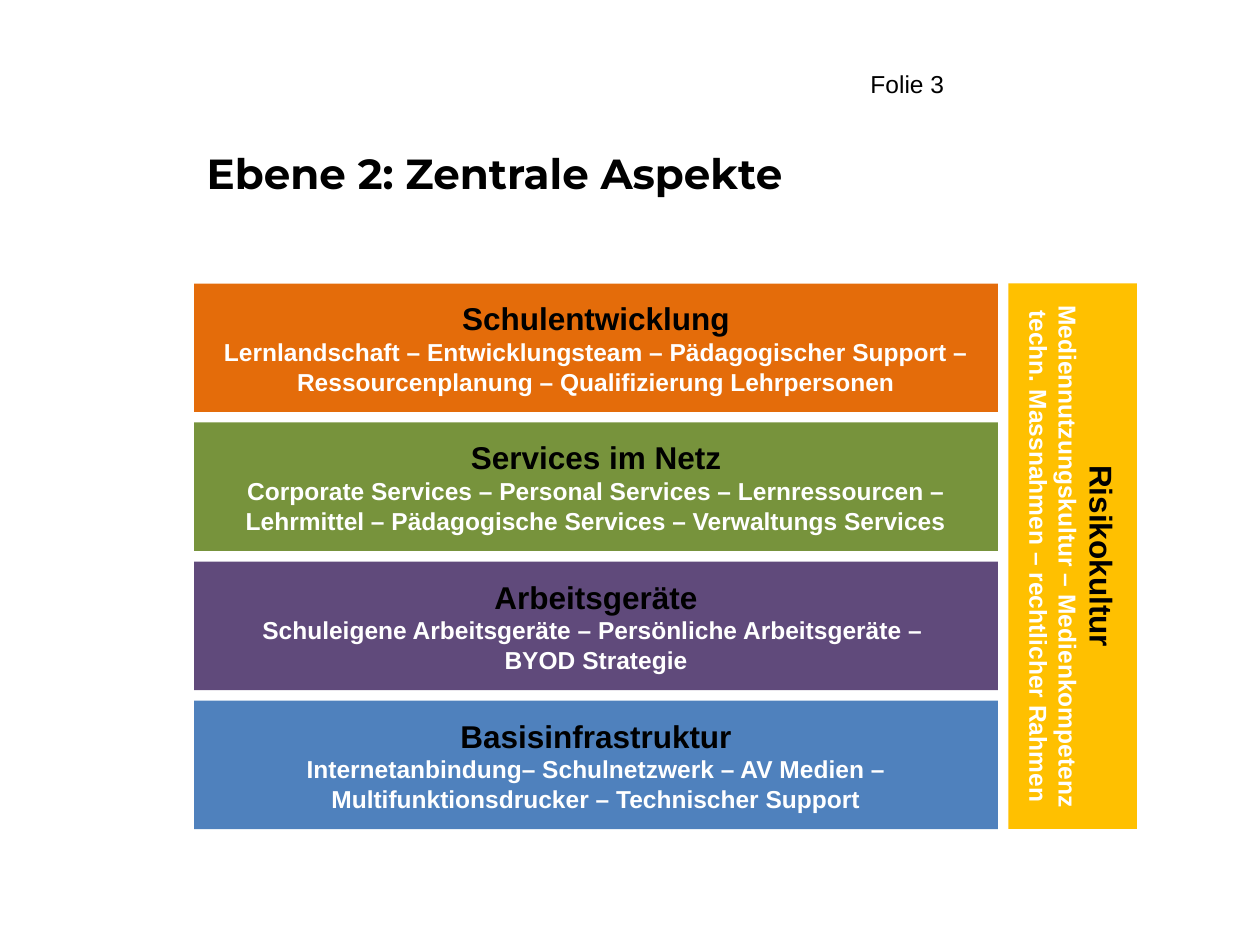
import pptx
import pptx.dml.color
import pptx.enum.shapes
import pptx.enum.text
import pptx.util

RGBColor = pptx.dml.color.RGBColor
BLACK = RGBColor(0x00, 0x00, 0x00)
WHITE = RGBColor(0xFF, 0xFF, 0xFF)
ORANGE = RGBColor(0xE4, 0x6C, 0x0A)
GREEN = RGBColor(0x77, 0x93, 0x3C)
PURPLE = RGBColor(0x60, 0x4A, 0x7B)
BLUE = RGBColor(0x4F, 0x81, 0xBD)
YELLOW = RGBColor(0xFF, 0xC0, 0x00)

GRID_LEFT, GRID_TOP = 1.54, 2.25
BAND_WIDTH, BAND_HEIGHT = 6.38, 1.02
GRID_HEIGHT = 4.33

LAYERS = [
    ("Schulentwicklung",
     "Lernlandschaft – Entwicklungsteam – Pädagogischer Support – "
     "Ressourcenplanung – Qualifizierung Lehrpersonen", ORANGE),
    ("Services im Netz",
     "Corporate Services – Personal Services – Lernressourcen – "
     "Lehrmittel – Pädagogische Services – Verwaltungs Services", GREEN),
    ("Arbeitsgeräte",
     "Schuleigene Arbeitsgeräte – Persönliche Arbeitsgeräte – \nBYOD Strategie", PURPLE),
    ("Basisinfrastruktur",
     "Internetanbindung– Schulnetzwerk – AV Medien – "
     "Multifunktionsdrucker – Technischer Support", BLUE),
]
GAP = (GRID_HEIGHT - len(LAYERS) * BAND_HEIGHT) / (len(LAYERS) - 1)


class AspectSlide:
    """Holds the style and the current slide, and adds each kind of element."""

    def __init__(self, presentation):
        self.font_name = "Arial"
        self.title_font_name = "Montserrat"
        self.slide = presentation.slides.add_slide(presentation.slide_layouts[5])

    def add_run(self, paragraph, text, size, color, bold=False, font_name=None):
        for index, line in enumerate(text.split("\n")):
            if index:
                paragraph.add_line_break()
            run = paragraph.add_run()
            run.text = line
            run.font.name = font_name or self.font_name
            run.font.size = pptx.util.Pt(size)
            run.font.bold = bold
            run.font.color.rgb = color

    def add_title(self, text):
        title = self.slide.shapes.title
        title.left, title.top, title.width, title.height = map(
            pptx.util.Inches, (GRID_LEFT, 1.12, 7.86, 0.59))
        frame = title.text_frame
        frame.auto_size = pptx.enum.text.MSO_AUTO_SIZE.NONE
        frame.vertical_anchor = pptx.enum.text.MSO_ANCHOR.TOP
        paragraph = frame.paragraphs[0]
        paragraph.alignment = pptx.enum.text.PP_ALIGN.LEFT
        self.add_run(paragraph, text, 24, BLACK, True, self.title_font_name)

    def add_label(self, text, left, top, width, height):
        label = self.slide.shapes.add_textbox(
            *map(pptx.util.Inches, (left, top, width, height)))
        label.text_frame.word_wrap = True
        self.add_run(label.text_frame.paragraphs[0], text, 14, BLACK)

    def add_band(self, heading, aspects, color, left, top, width):
        band = self.slide.shapes.add_shape(
            pptx.enum.shapes.MSO_SHAPE.RECTANGLE,
            *map(pptx.util.Inches, (left, top, width, BAND_HEIGHT)))
        band.shadow.inherit = False
        band.fill.solid()
        band.fill.fore_color.rgb = color
        band.line.fill.background()
        frame = band.text_frame
        frame.word_wrap = True
        frame.vertical_anchor = pptx.enum.text.MSO_ANCHOR.MIDDLE
        self.add_run(frame.paragraphs[0], heading, 18, BLACK, True)
        self.add_run(frame.add_paragraph(), aspects, 14, WHITE, True)
        for paragraph in frame.paragraphs:
            paragraph.alignment = pptx.enum.text.PP_ALIGN.CENTER
        return band

    def add_layer(self, row, heading, aspects, color):
        top = GRID_TOP + row * (BAND_HEIGHT + GAP)
        self.add_band(heading, aspects, color, GRID_LEFT, top, BAND_WIDTH)

    def add_side_band(self, heading, aspects, color):
        center_x = GRID_LEFT + BAND_WIDTH + GAP + BAND_HEIGHT / 2
        center_y = GRID_TOP + GRID_HEIGHT / 2
        band = self.add_band(heading, aspects, color, center_x - GRID_HEIGHT / 2,
                             center_y - BAND_HEIGHT / 2, GRID_HEIGHT)
        band.rotation = 90


def main():
    presentation = pptx.Presentation()
    presentation.slide_width = pptx.util.Inches(10)
    presentation.slide_height = pptx.util.Inches(7.5)
    slide = AspectSlide(presentation)
    slide.add_title("Ebene 2: Zentrale Aspekte")
    slide.add_label("Folie 3", 6.81, 0.5, 3.19, 0.34)
    for row, layer in enumerate(LAYERS):
        slide.add_layer(row, *layer)
    slide.add_side_band(
        "Risikokultur",
        "Mediennutzungskultur – Medienkompetenz techn. Massnahmen – rechtlicher Rahmen",
        YELLOW)
    presentation.save("out.pptx")


if __name__ == "__main__":
    main()
